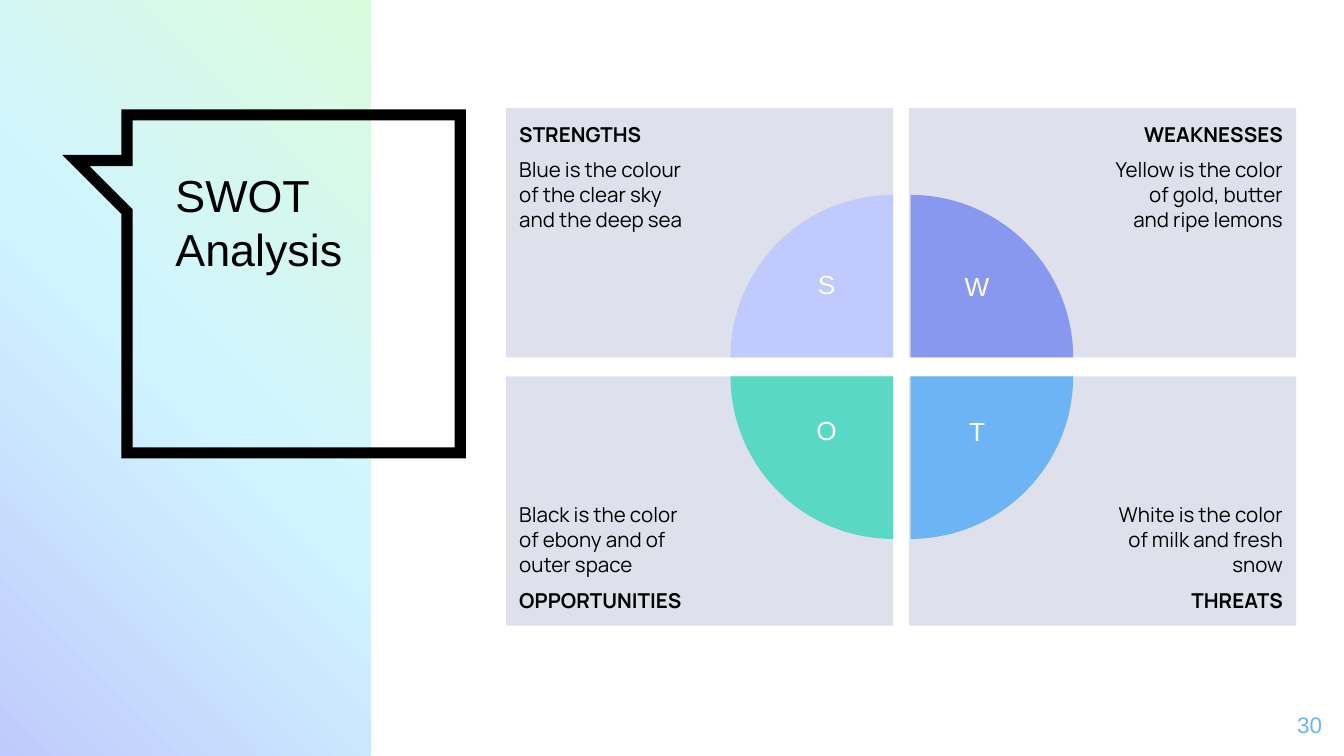
import pptx
import pptx.dml.color
import pptx.enum.shapes
import pptx.enum.text
import pptx.oxml.ns
import pptx.util
import copy
import lxml.etree

RGBColor = pptx.dml.color.RGBColor
Align = pptx.enum.text.PP_ALIGN
Anchor = pptx.enum.text.MSO_ANCHOR
Shape = pptx.enum.shapes.MSO_SHAPE
qn = pptx.oxml.ns.qn

EMU_PER_PX = 4572
BLACK = RGBColor(0x00, 0x00, 0x00)
WHITE = RGBColor(0xFF, 0xFF, 0xFF)
CARD = RGBColor(0xDE, 0xE1, 0xEC)
LAVENDER = RGBColor(0xC0, 0xCA, 0xFC)
ICE = RGBColor(0xD0, 0xF5, 0xFF)
MINT = RGBColor(0xDA, 0xFB, 0xDD)
VIOLET = RGBColor(0x87, 0x98, 0xEE)
SKY = RGBColor(0x6D, 0xB4, 0xF5)
TEAL = RGBColor(0x58, 0xD8, 0xC5)

QUADRANTS = [
    ("STRENGTHS", "Blue is the colour of the clear sky and the deep sea", "S", LAVENDER, 0, 0),
    ("WEAKNESSES", "Yellow is the color of gold, butter and ripe lemons", "W", VIOLET, 1, 0),
    ("OPPORTUNITIES", "Black is the color of ebony and of outer space", "O", TEAL, 0, 1),
    ("THREATS", "White is the color of milk and fresh snow", "T", SKY, 1, 1),
]
PIE_ROTATION = {(0, 0): 0, (1, 0): 90, (1, 1): 180, (0, 1): 270}


def px(*lengths):
    """Turn px lengths into EMU."""
    return [pptx.util.Emu(length * EMU_PER_PX) for length in lengths]


def set_insets(text_frame, left=20, top=20, right=20, bottom=20):
    """Set the four text insets in px."""
    (text_frame.margin_left, text_frame.margin_top,
     text_frame.margin_right, text_frame.margin_bottom) = px(left, top, right, bottom)


def format_paragraph(paragraph, font_name, size, color, align, bold=False):
    """Align a paragraph and style its runs."""
    paragraph.alignment = align
    for run in paragraph.runs:
        run.font.name = font_name
        run.font.size = pptx.util.Pt(size)
        run.font.bold = bold
        run.font.color.rgb = color


def add_block(slide, kind, box):
    """Add a preset shape without line or shadow."""
    shape = slide.shapes.add_shape(kind, *px(*box))
    shape.shadow.inherit = False
    shape.line.fill.background()
    return shape


def add_label(slide, box, text, size, color, align):
    """Add a one-line Arial text box."""
    shape = slide.shapes.add_textbox(*px(*box))
    shape.text_frame.word_wrap = True
    shape.text_frame.text = text
    format_paragraph(shape.text_frame.paragraphs[0], "Arial", size, color, align)
    return shape


def add_side_panel(slide, box):
    """Draw the gradient panel at the left edge."""
    panel = add_block(slide, Shape.RECTANGLE, box)
    panel.fill.gradient()
    panel.fill.gradient_angle = 45
    stop_list = panel._element.spPr.find(qn("a:gradFill")).find(qn("a:gsLst"))
    stop_list.insert(1, copy.deepcopy(stop_list[0]))
    stops = zip(panel.fill.gradient_stops, (0, 0.5, 1), (LAVENDER, ICE, MINT))
    for stop, position, color in stops:
        stop.position = position
        stop.color.rgb = color


def add_title_bubble(slide, box, text):
    """Draw the speech bubble outline and place the title inside it."""
    left, top, width, height = box
    right, bottom = left + width, top + height
    builder = slide.shapes.build_freeform(left, top, scale=EMU_PER_PX)
    builder.add_line_segments([
        (right, top), (right, bottom), (left, bottom),
        (left, top + 144), (left - 76, top + 68), (left, top + 68),
    ], close=True)
    bubble = builder.convert_to_shape()
    bubble.shadow.inherit = False
    bubble.fill.background()
    bubble.line.color.rgb = BLACK
    bubble.line.width = pptx.util.Pt(6)
    lxml.etree.SubElement(bubble.line._get_or_add_ln(), qn("a:miter"), lim="800000")

    title = slide.shapes.title
    title.left, title.top, title.width, title.height = px(left + 52, top + 59, 402, 396)
    text_frame = title.text_frame
    text_frame.text = text
    text_frame.word_wrap = True
    text_frame.auto_size = pptx.enum.text.MSO_AUTO_SIZE.NONE
    text_frame.vertical_anchor = Anchor.TOP
    set_insets(text_frame)
    format_paragraph(text_frame.paragraphs[0], "Arial", 24, BLACK, Align.LEFT)
    slide.shapes._spTree.append(title._element)


def add_quadrant(slide, box, heading, body, letter, color, column, row):
    """Draw one card with its text, quarter circle and letter."""
    left, top, width, height = box
    card = add_block(slide, Shape.RECTANGLE, box)
    card.fill.solid()
    card.fill.fore_color.rgb = CARD
    text_frame = card.text_frame
    text_frame.word_wrap = True
    text_frame.vertical_anchor = Anchor.BOTTOM if row else Anchor.TOP
    set_insets(text_frame, left=300 if column else 20, right=20 if column else 300)
    text_frame.text = "\n".join([body, heading] if row else [heading, body])
    for paragraph in text_frame.paragraphs:
        format_paragraph(paragraph, "Manrope", 11, BLACK,
                         Align.RIGHT if column else Align.LEFT, paragraph.text == heading)
    text_frame.paragraphs[1].space_before = pptx.util.Pt(6)
    text_frame.paragraphs[1].space_after = pptx.util.Pt(6)

    radius = 242
    corner_x = left + 2 if column else left + width
    corner_y = top if row else top + height
    pie = add_block(slide, Shape.PIE,
                    (corner_x - radius, corner_y - radius, 2 * radius, 2 * radius))
    pie.adjustments[0], pie.adjustments[1] = 108, 162
    pie.rotation = PIE_ROTATION[column, row]
    pie.fill.solid()
    pie.fill.fore_color.rgb = color

    center_x = corner_x + (99 if column else -99)
    letter_top = corner_y + (47 if row else -142) + 2 * column
    add_label(slide, (center_x - 40, letter_top, 80, 88), letter, 14, WHITE, Align.CENTER)


def add_swot_grid(slide, box, gap_x, gap_y):
    """Lay the four quadrants out in a two by two grid."""
    left, top, width, height = box
    card_width, card_height = (width - gap_x) // 2, (height - gap_y) // 2
    for quadrant in QUADRANTS:
        column, row = quadrant[-2:]
        card_box = (left + column * (card_width + gap_x),
                    top + row * (card_height + gap_y), card_width, card_height)
        add_quadrant(slide, card_box, *quadrant)


def main():
    """Build and save the slide."""
    presentation = pptx.Presentation()
    presentation.slide_width, presentation.slide_height = px(2000, 1125)
    slide = presentation.slides.add_slide(presentation.slide_layouts[5])
    add_side_panel(slide, (0, 0, 552, 1125))
    add_title_bubble(slide, (189, 171, 496, 503), "SWOT Analysis")
    page_number = add_label(slide, (1867, 1039, 120, 86), "30", 12, SKY, Align.RIGHT)
    set_insets(page_number.text_frame)
    add_swot_grid(slide, (753, 161, 1176, 770), 24, 28)
    presentation.save("out.pptx")


if __name__ == "__main__":
    main()
